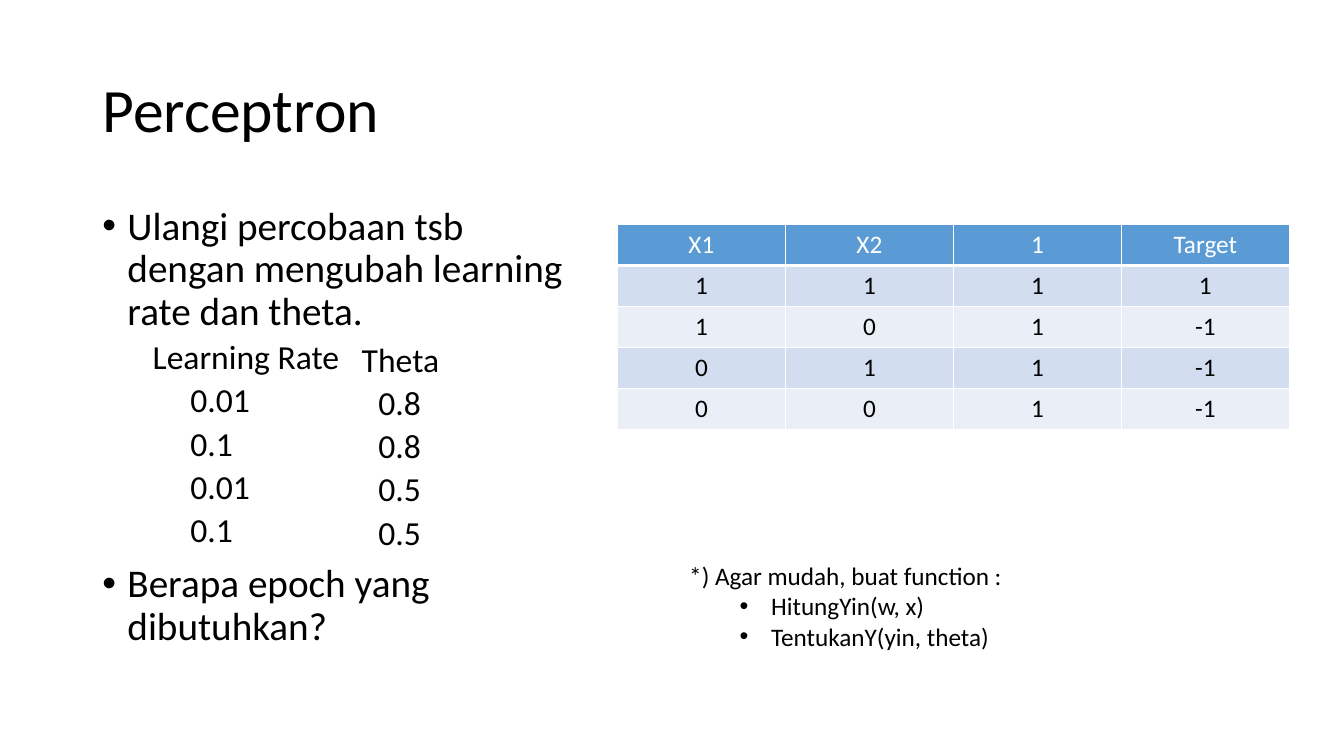
from lxml.etree import SubElement
from pptx import Presentation
from pptx.dml.color import RGBColor
from pptx.enum.text import MSO_ANCHOR, MSO_AUTO_SIZE, PP_ALIGN
from pptx.oxml.ns import qn
from pptx.util import Pt

EMU_PER_PX = 9525
FONT = "Calibri"
COLORS = {
    "text": "000000",
    "white": "FFFFFF",
    "header": "5B9BD5",
    "odd_row": "D2DEEF",
    "even_row": "EAEFF7",
}
TRUTH_TABLE = [
    ["X1", "X2", "1", "Target"],
    ["1", "1", "1", "1"],
    ["1", "0", "1", "-1"],
    ["0", "1", "1", "-1"],
    ["0", "0", "1", "-1"],
]
LEARNING_RATES = ["0.01", "0.1", "0.01", "0.1"]
THETAS = ["0.8", "0.8", "0.5", "0.5"]


def px(length):
    return length * EMU_PER_PX


def rgb(name):
    return RGBColor.from_string(COLORS[name])


def write(frame, text, size, color="text", align=PP_ALIGN.LEFT, level=0,
          margin=0, indent=0, bullet=False, line=1.0, before=0):
    """Fill the frame's empty first paragraph, or add another one."""
    first = len(frame.paragraphs) == 1 and not frame.text
    paragraph = frame.paragraphs[0] if first else frame.add_paragraph()
    paragraph.level = level
    paragraph.alignment = align
    paragraph.line_spacing = line
    paragraph.space_before = Pt(0 if first else before)
    properties = paragraph._p.get_or_add_pPr()
    properties.set("marL", str(px(margin)))
    properties.set("indent", str(px(indent)))
    if bullet:
        SubElement(properties, qn("a:buFont"), typeface="Arial")
        SubElement(properties, qn("a:buChar"), char="•")
    else:
        SubElement(properties, qn("a:buNone"))
    run = paragraph.add_run()
    run.text = text
    run.font.name = FONT
    run.font.size = Pt(size)
    run.font.color.rgb = rgb(color)


def add_text_frame(slide, box):
    frame = slide.shapes.add_textbox(*map(px, box)).text_frame
    frame.word_wrap = True
    return frame


def place_title(slide, box):
    title = slide.shapes.title
    title.left, title.top, title.width, title.height = map(px, box)
    frame = title.text_frame
    frame.auto_size = MSO_AUTO_SIZE.NONE
    frame.vertical_anchor = MSO_ANCHOR.MIDDLE
    write(frame, "Perceptron", 44, line=0.9)


def write_trials(frame, heading, values, margin, value_margin):
    trial = dict(size=24, level=1, line=0.9, before=5)
    write(frame, heading, margin=margin, **trial)
    for value in values:
        write(frame, value, margin=value_margin, **trial)


def add_task(slide, box):
    """Place the task, with the theta column beside the learning rates."""
    left, top, _, _ = box
    frame = add_text_frame(slide, box)
    point = dict(size=28, margin=24, indent=-24, bullet=True, line=0.9, before=10)
    write(frame, "Ulangi percobaan tsb dengan mengubah learning rate dan theta.", **point)
    write_trials(frame, "Learning Rate", LEARNING_RATES, margin=48, value_margin=84)
    write(frame, "Berapa epoch yang dibutuhkan?", **point)
    theta_frame = add_text_frame(slide, (left + 247, top + 130, 120, 214))
    write_trials(theta_frame, "Theta", THETAS, margin=0, value_margin=16)


def add_border(cell, side, points):
    border = SubElement(cell._tc.get_or_add_tcPr(), qn(f"a:ln{side}"), w=str(Pt(points)))
    fill = SubElement(border, qn("a:solidFill"))
    SubElement(fill, qn("a:srgbClr"), val=COLORS["white"])


def add_truth_table(slide, box):
    rows, columns = len(TRUTH_TABLE), len(TRUTH_TABLE[0])
    table = slide.shapes.add_table(rows, columns, *map(px, box)).table
    for column in table.columns:
        column.width = px(box[2] // columns)
    for row_number, values in enumerate(TRUTH_TABLE):
        table.rows[row_number].height = px(box[3] // rows)
        is_header = row_number == 0
        fill = "header" if is_header else "odd_row" if row_number % 2 else "even_row"
        for column_number, value in enumerate(values):
            cell = table.cell(row_number, column_number)
            for side in "LRTB":
                thick = (is_header and side == "B") or (row_number == 1 and side == "T")
                add_border(cell, side, 3 if thick else 1)
            cell.fill.solid()
            cell.fill.fore_color.rgb = rgb(fill)
            write(cell.text_frame, value, 18, align=PP_ALIGN.CENTER,
                  color="white" if is_header else "text")


def add_function_note(slide, box):
    frame = add_text_frame(slide, box)
    write(frame, "*) Agar mudah, buat function :", 18)
    for signature in ("HitungYin(w, x)", "TentukanY(yin, theta)"):
        write(frame, signature, 18, level=1, margin=78, indent=-30, bullet=True)


def main():
    presentation = Presentation()
    presentation.slide_width, presentation.slide_height = px(1280), px(720)
    slide = presentation.slides.add_slide(presentation.slide_layouts.get_by_name("Title Only"))
    slide.background.fill.solid()
    slide.background.fill.fore_color.rgb = rgb("white")
    place_title(slide, (88, 38, 1104, 139))
    add_task(slide, (88, 192, 479, 457))
    add_truth_table(slide, (588, 214, 640, 195))
    add_function_note(slide, (647, 529, 501, 97))
    presentation.save("out.pptx")


if __name__ == "__main__":
    main()
